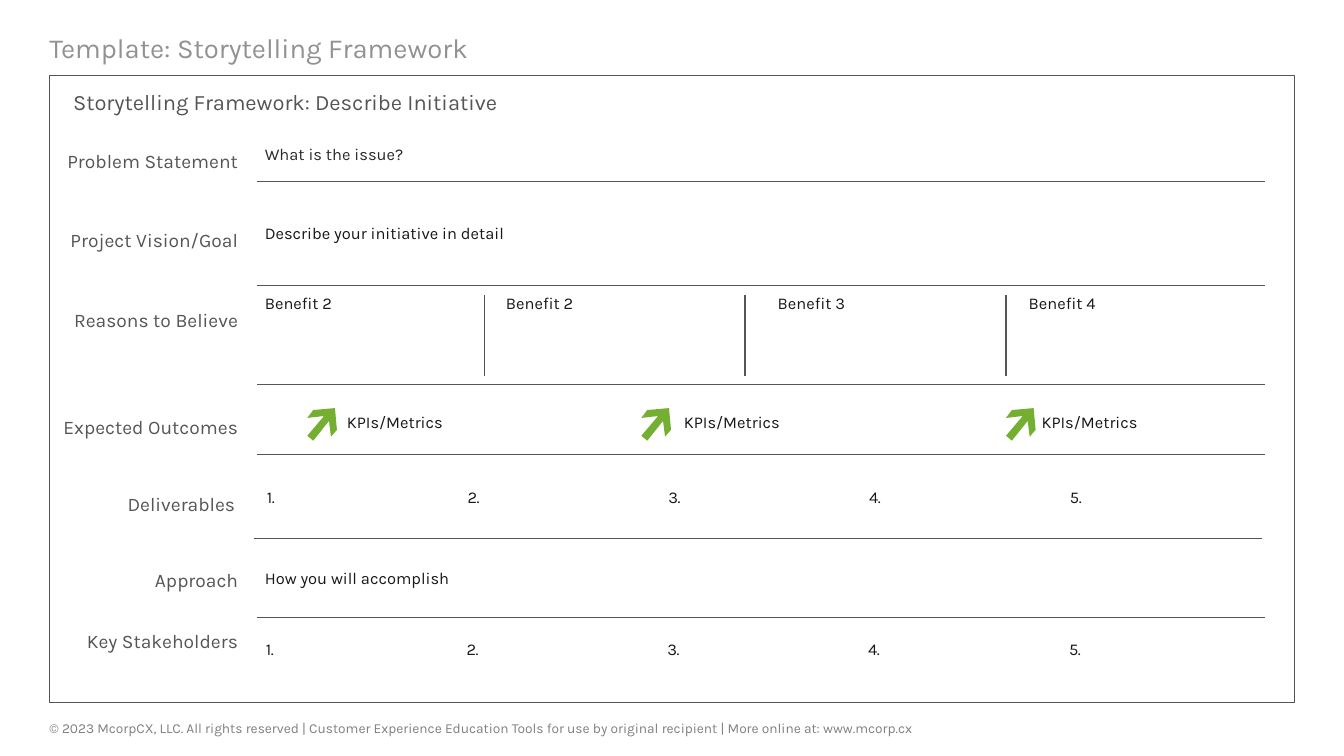
from dataclasses import dataclass

from lxml.etree import SubElement
from pptx import Presentation
from pptx.dml.color import RGBColor
from pptx.enum.shapes import MSO_CONNECTOR, MSO_SHAPE
from pptx.enum.text import MSO_ANCHOR, PP_ALIGN
from pptx.oxml.ns import qn
from pptx.util import Inches, Pt

GRID_COLUMNS = 136
SLIDE_WIDTH = Inches(13.6)
SLIDE_HEIGHT = Inches(7.65)
CELL = SLIDE_WIDTH / GRID_COLUMNS

ARROW_OUTLINE = [(1.7, 0.8), (0, 1), (0.6, 0.2), (2.8, 0), (3, 2.2),
                 (2.4, 2.9), (2.2, 1.3), (0.6, 3.3), (0, 2.8)]


@dataclass(frozen=True)
class Theme:
    font: str = "Karla"
    title: str = "909192"
    heading: str = "545555"
    body: str = "181818"
    prompt: str = "2A2A2A"
    footer: str = "808080"
    arrow: str = "75AF31"
    title_size: float = 20
    heading_size: float = 16
    label_size: float = 14
    body_size: float = 12
    footer_size: float = 10
    rule_width: float = 1
    frame_width: float = 0.75


THEME = Theme()


@dataclass(frozen=True)
class Box:
    left: float
    top: float
    width: float
    height: float

    def inner(self, left, top, width, height):
        return Box(self.left + left, self.top + top, width, height)

    def emu(self):
        return [units(value) for value in (self.left, self.top, self.width, self.height)]


def units(value):
    return round(value * CELL)


def color(value):
    return RGBColor.from_string(value)


def write(frame, text, size=THEME.body_size, fill=THEME.body, align=PP_ALIGN.LEFT,
          anchor=MSO_ANCHOR.MIDDLE, margins=(0.8, 0.4), line_spacing=None, tracking=None):
    frame.word_wrap = True
    frame.vertical_anchor = anchor
    frame.margin_left = frame.margin_right = units(margins[0])
    frame.margin_top = frame.margin_bottom = units(margins[1])
    paragraph = frame.paragraphs[0]
    paragraph.alignment = align
    if line_spacing:
        paragraph.line_spacing = line_spacing
    run = paragraph.add_run()
    run.text = text
    run.font.name = THEME.font
    run.font.size = Pt(size)
    run.font.color.rgb = color(fill)
    if tracking:
        run._r.get_or_add_rPr().set("spc", str(tracking))


def add_text(slide, box, text, **style):
    write(slide.shapes.add_textbox(*box.emu()).text_frame, text, **style)


def add_rule(slide, left, top, right, bottom):
    rule = slide.shapes.add_connector(
        MSO_CONNECTOR.STRAIGHT, *[units(value) for value in (left, top, right, bottom)])
    rule.line.color.rgb = color(THEME.heading)
    rule.line.width = Pt(THEME.rule_width)
    SubElement(rule._element.spPr, qn("a:effectLst"))


def add_arrow(slide, left, top):
    points = [(units(left + x), units(top + y)) for x, y in ARROW_OUTLINE]
    builder = slide.shapes.build_freeform(*points[0])
    builder.add_line_segments(points[1:], close=True)
    arrow = builder.convert_to_shape()
    arrow.shadow.inherit = False
    arrow.fill.solid()
    arrow.fill.fore_color.rgb = color(THEME.arrow)
    arrow.line.fill.background()


def add_title(slide, box):
    title = slide.shapes.title
    title.left, title.top, title.width, title.height = box.emu()
    write(title.text_frame, "Template: Storytelling Framework", size=THEME.title_size,
          fill=THEME.title, anchor=MSO_ANCHOR.TOP, margins=(0, 0), line_spacing=0.75)


def add_panel(slide, box):
    frame = slide.shapes.add_shape(MSO_SHAPE.RECTANGLE, *box.emu())
    frame.shadow.inherit = False
    frame.fill.background()
    frame.line.color.rgb = color(THEME.heading)
    frame.line.width = Pt(THEME.frame_width)
    add_text(slide, box.inner(1.6, 0.9, 105, 3.6),
             "Storytelling Framework: Describe Initiative",
             size=THEME.heading_size, fill=THEME.heading)


def add_band(slide, box, label, label_center, ruled=True):
    add_text(slide, box.inner(-22.3, label_center - 2, 21.2, 4), label,
             size=THEME.label_size, fill=THEME.heading, align=PP_ALIGN.RIGHT)
    if ruled:
        bottom = box.top + box.height
        add_rule(slide, box.left, bottom, box.left + box.width, bottom)


def add_prompt(slide, box, text, center, fill=THEME.body):
    add_text(slide, box.inner(0, center - 2, box.width, 4), text, fill=fill)


def add_benefits(slide, box):
    benefits = [(0, "Benefit 2"), (24.4, "Benefit 2"), (51.9, "Benefit 3"), (77.3, "Benefit 4")]
    for left, text in benefits:
        add_text(slide, box.inner(left, 0.4, 22.2, 9), text, anchor=MSO_ANCHOR.TOP)
    for offset in (23, 49.4, 75.8):
        left = box.left + offset
        add_rule(slide, left, box.top + 1, left, box.top + 9.1)


def add_outcomes(slide, box):
    for arrow_left, text_left in [(5.1, 8.3), (38.9, 42.4), (75.8, 78.6)]:
        add_arrow(slide, box.left + arrow_left, box.top + 2.4)
        add_text(slide, box.inner(text_left, 1.7, 23.4, 4.1), "KPIs/Metrics")


def add_numbers(slide, box, count=5):
    table = slide.shapes.add_table(1, count, *box.emu()).table
    table.first_row = False
    table.horz_banding = False
    for index in range(count):
        table.columns[index].width = units(box.width / count)
        cell = table.cell(0, index)
        cell.fill.background()
        cell.vertical_anchor = MSO_ANCHOR.TOP
        cell.margin_left = cell.margin_right = units(1)
        cell.margin_top = cell.margin_bottom = units(0.5)
        write_cell(cell, f"{index + 1}.")


def write_cell(cell, text):
    write(cell.text_frame, text, anchor=MSO_ANCHOR.TOP, margins=(0.8, 0.5), tracking=-30)
    cell.margin_left = cell.margin_right = units(0.9)


def add_footer(slide, box):
    add_text(slide, box,
             "© 2023 McorpCX, LLC. All rights reserved | Customer Experience Education Tools "
             "for use by original recipient | More online at: www.mcorp.cx",
             size=THEME.footer_size, fill=THEME.footer, margins=(0, 0))


def add_framework(slide, box):
    add_panel(slide, box)
    problem = box.inner(21, 4.9, 102, 5.9)
    vision = box.inner(21, 10.8, 102, 10.5)
    reasons = box.inner(21, 21.3, 102, 10)
    outcomes = box.inner(21, 31.3, 102, 7.1)
    deliverables = box.inner(20.7, 38.4, 102, 8.5)
    approach = box.inner(21, 46.9, 102, 8)
    stakeholders = box.inner(21, 54.9, 102, 8.6)

    add_band(slide, problem, "Problem Statement", 3.75)
    add_band(slide, vision, "Project Vision/Goal", 5.9)
    add_band(slide, reasons, "Reasons to Believe", 3.45)
    add_band(slide, outcomes, "Expected Outcomes", 4.25)
    add_band(slide, deliverables, "Deliverables", 5)
    add_band(slide, approach, "Approach", 4.2)
    add_band(slide, stakeholders, "Key Stakeholders", 2.35, ruled=False)

    add_prompt(slide, problem, "What is the issue?", 3.05, fill=THEME.prompt)
    add_prompt(slide, vision, "Describe your initiative in detail", 5.2)
    add_benefits(slide, reasons)
    add_outcomes(slide, outcomes)
    add_numbers(slide, deliverables.inner(0.4, 2.9, 101.6, 4.1))
    add_prompt(slide, approach, "How you will accomplish", 4)
    add_numbers(slide, stakeholders.inner(0, 1.8, 101.6, 4.1))


def main():
    presentation = Presentation()
    presentation.slide_width = SLIDE_WIDTH
    presentation.slide_height = SLIDE_HEIGHT
    slide = presentation.slides.add_slide(presentation.slide_layouts[5])
    add_title(slide, Box(5, 3.9, 126, 2.5))
    add_framework(slide, Box(5, 7.6, 126, 63.5))
    add_footer(slide, Box(5, 72.8, 113.3, 1.7))
    presentation.save("out.pptx")


if __name__ == "__main__":
    main()
